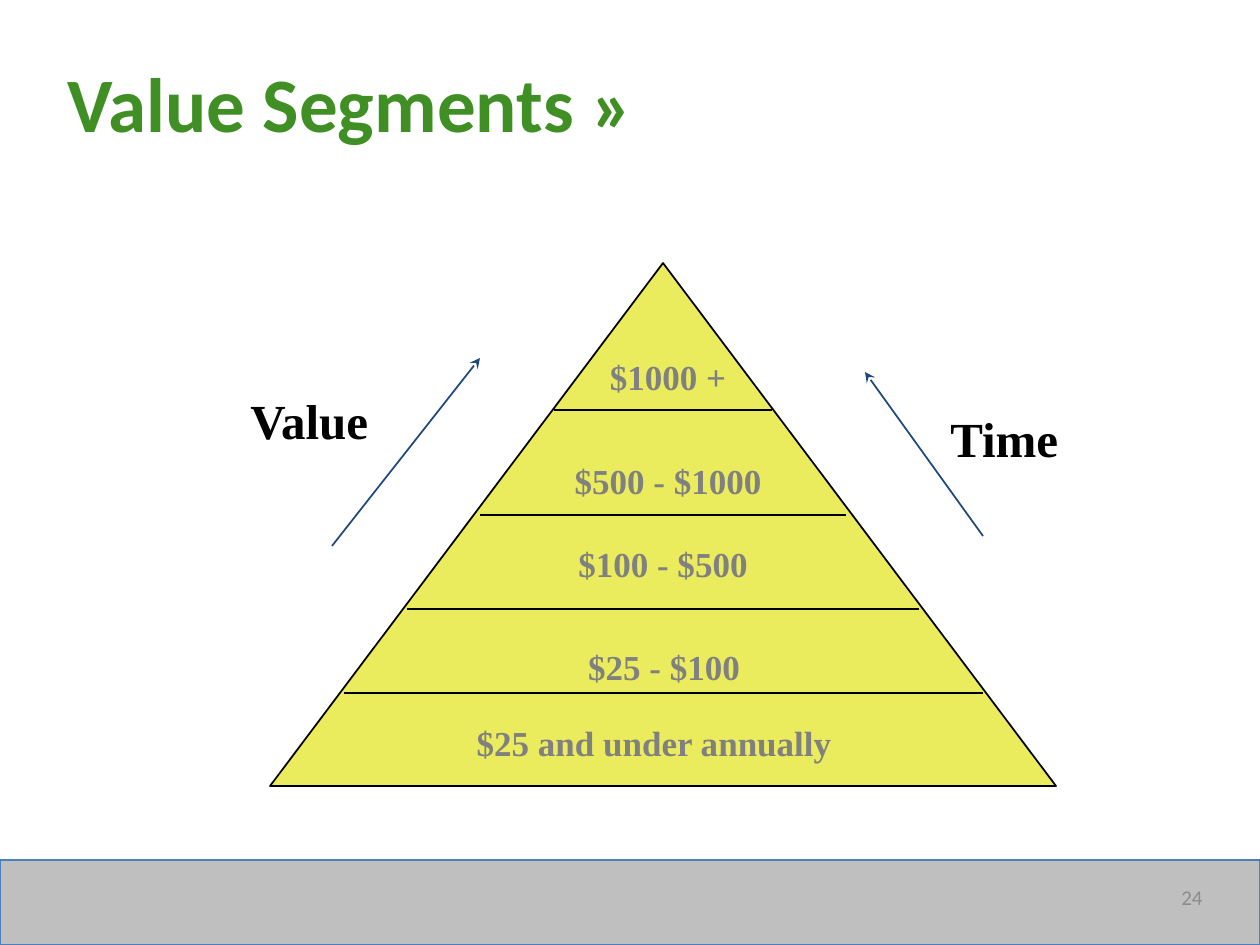
from typing import NamedTuple

from lxml.etree import SubElement
from pptx import Presentation
from pptx.dml.color import RGBColor
from pptx.enum.shapes import MSO_CONNECTOR as Conn, MSO_SHAPE as Shape
from pptx.enum.text import MSO_ANCHOR as Anchor, PP_ALIGN as Align
from pptx.oxml.ns import qn
from pptx.util import Emu, Pt

EMU_PER_PX = 914400 / 126
SLIDE_W, SLIDE_H = 1260, 945
SERIF, SANS = "Times New Roman", "Calibri"


class Style(NamedTuple):
    size: int
    font: str
    color: str
    bold: bool = True
    align: Align = Align.LEFT
    anchor: Anchor = Anchor.TOP


class Label(NamedTuple):
    text: str
    x: int
    y: int
    w: int
    h: int
    style: Style


class Line(NamedTuple):
    x1: int
    y1: int
    x2: int
    y2: int
    color: str = "000000"
    arrow: bool = False


TIER = Style(20, SERIF, "808080", align=Align.CENTER)
AXIS = Style(28, SERIF, "000000")
TITLE = Style(44, SANS, "3F8F24", anchor=Anchor.MIDDLE)
NUMBER = Style(12, SANS, "8C8C8C", False, Align.RIGHT, Anchor.MIDDLE)

LINES = [
    # Tier dividers
    Line(554, 410, 772, 410),
    Line(480, 515, 846, 515),
    Line(407, 609, 919, 609),
    Line(344, 693, 983, 693),
    # Arrows beside the pyramid
    Line(332, 546, 480, 358, "1F497D", True),
    Line(983, 536, 865, 372, "1F497D", True),
]

LABELS = [
    Label("$1000 +", 584, 349, 168, 54, TIER),
    Label("$500 - $1000", 553, 453, 230, 54, TIER),
    Label("$100 - $500", 548, 536, 230, 54, TIER),
    Label("$25 - $100", 549, 639, 230, 54, TIER),
    Label("$25 and under annually", 438, 715, 432, 54, TIER),
    Label("Value", 238, 384, 189, 71, AXIS),
    Label("Time", 938, 402, 189, 71, AXIS),
    Label("24", 921, 872, 294, 50, NUMBER),
    Label("Value Segments »", 55, 0, 1205, 204, TITLE),
]


def px(n: int) -> Emu:
    return Emu(round(n * EMU_PER_PX))


def rgb(color: str) -> RGBColor:
    return RGBColor.from_string(color)


def add_block(slide, kind: Shape, x: int, y: int, w: int, h: int,
              fill: str, line: str, width: float) -> None:
    s = slide.shapes.add_shape(kind, px(x), px(y), px(w), px(h))
    s.shadow.inherit = False
    s.fill.solid()
    s.fill.fore_color.rgb = rgb(fill)
    s.line.color.rgb = rgb(line)
    s.line.width = Pt(width)


def add_line(slide, line: Line) -> None:
    s = slide.shapes.add_connector(
        Conn.STRAIGHT, px(line.x1), px(line.y1), px(line.x2), px(line.y2))
    s.line.color.rgb = rgb(line.color)
    s.line.width = Pt(1)
    if line.arrow:
        SubElement(s.line._get_or_add_ln(), qn("a:tailEnd"), type="stealth")
    SubElement(s._element.spPr, qn("a:effectLst"))


def add_label(slide, label: Label) -> None:
    style = label.style
    s = slide.shapes.add_textbox(
        px(label.x), px(label.y), px(label.w), px(label.h))
    tf = s.text_frame
    tf.word_wrap = True
    tf.vertical_anchor = style.anchor
    tf.text = label.text
    p = tf.paragraphs[0]
    p.alignment = style.align
    r = p.runs[0]
    r.font.size = Pt(style.size)
    r.font.name = style.font
    r.font.bold = style.bold
    r.font.color.rgb = rgb(style.color)


def main() -> None:
    prs = Presentation()
    prs.slide_width, prs.slide_height = px(SLIDE_W), px(SLIDE_H)
    slide = prs.slides.add_slide(prs.slide_layouts[6])

    # Pyramid and footer bar
    add_block(slide, Shape.ISOSCELES_TRIANGLE, 270, 263, 786, 523,
              "EAEC5E", "000000", 1)
    add_block(slide, Shape.RECTANGLE, 0, 860, SLIDE_W, SLIDE_H - 860,
              "BFBFBF", "4B7EBC", 0.75)

    # Dividers, arrows and all text
    for line in LINES:
        add_line(slide, line)
    for label in LABELS:
        add_label(slide, label)

    prs.save("out.pptx")


if __name__ == "__main__":
    main()
